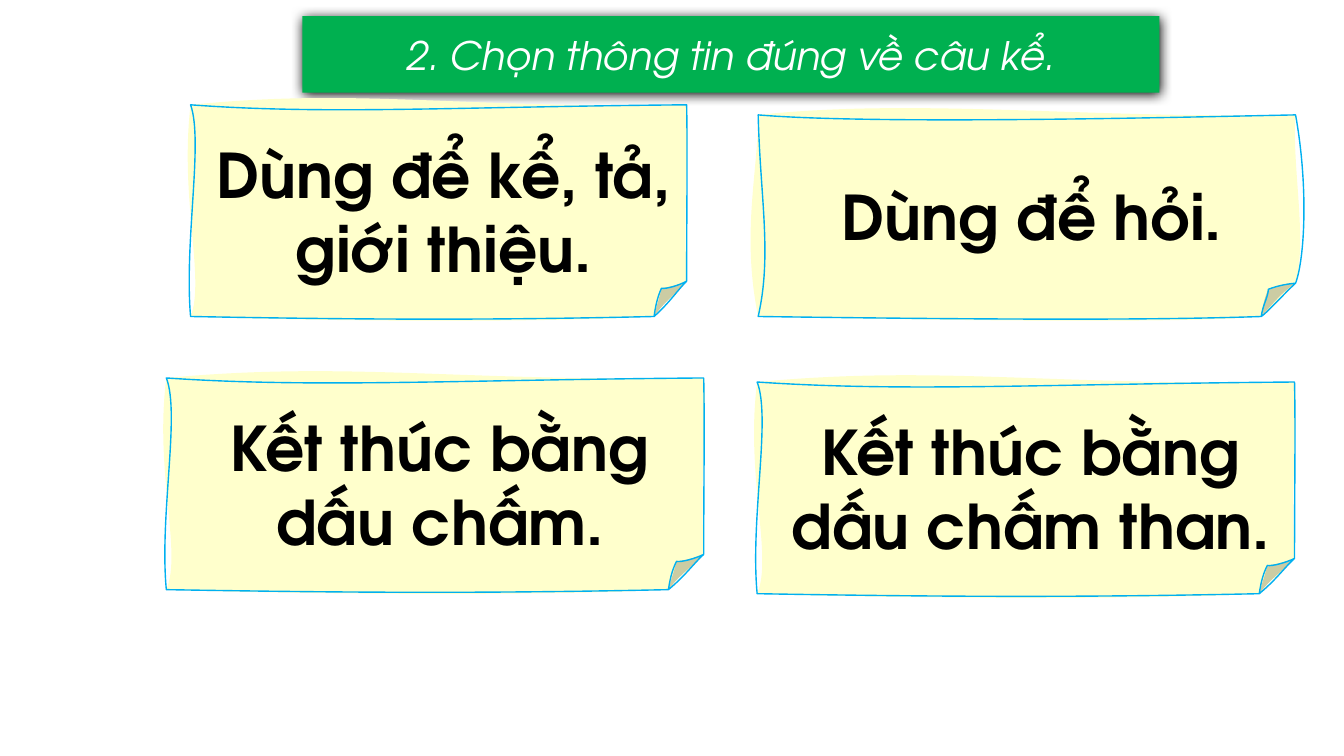
from dataclasses import dataclass

from lxml import etree
from pptx import Presentation
from pptx import util as u
from pptx.dml.color import RGBColor
from pptx.enum import text
from pptx.oxml import parse_xml
from pptx.oxml.ns import nsdecls, qn


@dataclass(frozen=True)
class Theme:
    font: str = "TeX Gyre Adventor"
    banner: str = "00B050"
    banner_text: str = "FFFFFF"
    paper: str = "FFFFCC"
    edge: str = "00B0F0"
    ink: str = "000000"
    title_size: int = 28
    note_size: int = 44


theme = Theme()
CELL = u.Inches(0.01)  # the slide is a grid of 1333 columns by 750 rows

# Note outlines on their own grid: start point, then three points per curve
STRAIGHT = (533, 210, {
    "paper": "0 0  182 -17 288 4 533 0  537 33 529 89 533 175  519 191 509 195 498 210 "
             "368 217 98 214 0 210  16 173 -12 93 0 0",
    "fold": "498 210  500 201 503 195 506 182  519 180 526 178 533 175  520 189 511 193 498 210",
    "edge": "498 210  500 196 503 188 506 182  511 183 525 179 533 175  524 183 515 196 498 210 "
            "314 214 174 213 0 210  -7 136 14 36 0 0  146 10 284 2 533 0  534 51 533 103 533 175",
})
BOWED = (533, 200, {
    "paper": "0 0  160 -17 326 4 533 0  529 49 545 124 533 167  524 173 511 191 499 200 "
             "433 207 169 204 0 200  -17 118 0 56 0 0",
    "fold": "499 200  500 189 504 177 506 173  510 172 520 167 533 167  520 175 509 189 499 200",
    "edge": "499 200  500 190 506 180 506 173  514 170 522 168 533 167  524 175 505 196 499 200 "
            "387 204 218 203 0 200  14 139 2 82 0 0  117 10 434 2 533 0  546 72 542 143 533 167",
})
PATH_STYLE = {
    "paper": {"stroke": "0"},
    "fold": {"stroke": "0", "fill": "darkenLess"},
    "edge": {"fill": "none"},
}

# Text, left, top, width, height, outline
NOTES = [
    ("Dùng để kể, tả, giới thiệu.", 189, 104, 492, 210, STRAIGHT),
    ("Dùng để hỏi.", 752, 114, 533, 200, BOWED),
    ("Kết thúc bằng dấu chấm.", 165, 375, 533, 210, STRAIGHT),
    ("Kết thúc bằng dấu chấm than.", 751, 379, 533, 210, STRAIGHT),
]


def write(shape, wording, size, color, bold=False, italic=False):
    frame = shape.text_frame
    frame.text = wording
    frame.word_wrap = True
    frame.auto_size = text.MSO_AUTO_SIZE.NONE
    frame.vertical_anchor = text.MSO_ANCHOR.MIDDLE
    para = frame.paragraphs[0]
    para.alignment = text.PP_ALIGN.CENTER
    font = para.runs[0].font
    font.name, font.size = theme.font, u.Pt(size)
    font.bold, font.italic = bold, italic
    font.color.rgb = RGBColor.from_string(color)
    return para


def draw_curves(shape, outline):
    width, height, curves = outline
    path_list = shape.element.spPr.find(".//" + qn("a:pathLst"))
    path_list.clear()
    for part, numbers in curves.items():
        values = numbers.split()
        points = list(zip(values[::2], values[1::2]))
        path = etree.SubElement(path_list, qn("a:path"), w=str(width), h=str(height),
                                **PATH_STYLE[part])
        steps = [("a:moveTo", points[:1])]
        steps += [("a:cubicBezTo", points[i:i + 3]) for i in range(1, len(points), 3)]
        for tag, stops in steps:
            step = etree.SubElement(path, qn(tag))
            for x, y in stops:
                etree.SubElement(step, qn("a:pt"), x=x, y=y)
        if part != "edge":
            etree.SubElement(path, qn("a:close"))


deck = Presentation()
deck.slide_width, deck.slide_height = 1333 * CELL, 750 * CELL
page = deck.slides.add_slide(deck.slide_layouts[5])

# Title banner: rounded, green, with a soft shadow below
banner = page.shapes.title
banner.left, banner.top, banner.width, banner.height = (n * CELL for n in (300, 16, 850, 76))
banner.element.spPr.append(parse_xml(
    f'<a:prstGeom {nsdecls("a")} prst="roundRect"><a:avLst/></a:prstGeom>'))
banner.fill.solid()
banner.fill.fore_color.rgb = RGBColor.from_string(theme.banner)
banner.line.fill.background()
banner.element.spPr.append(parse_xml(
    f'<a:effectLst {nsdecls("a")}><a:outerShdw blurRad="{u.Pt(8.5)}" dist="{u.Pt(1)}" '
    'dir="5400000" algn="t" rotWithShape="0"><a:srgbClr val="000000"/></a:outerShdw></a:effectLst>'))
write(banner, "2. Chọn thông tin đúng về câu kể.", theme.title_size, theme.banner_text, italic=True)

# Answer notes with a folded corner
for wording, left, top, width, height, outline in NOTES:
    right, bottom = left + width, top + height
    builder = page.shapes.build_freeform(left, top, scale=CELL)
    builder.add_line_segments([(right, top), (right, bottom), (left, bottom)])
    note = builder.convert_to_shape()
    draw_curves(note, outline)
    note.shadow.inherit = False
    note.fill.solid()
    note.fill.fore_color.rgb = RGBColor.from_string(theme.paper)
    note.line.color.rgb = RGBColor.from_string(theme.edge)
    note.line.width = u.Pt(1)
    para = write(note, wording, theme.note_size, theme.ink, bold=True)
    para.space_before = u.Pt(6)
    note.text_frame.margin_left = 20 * CELL

deck.save("out.pptx")
